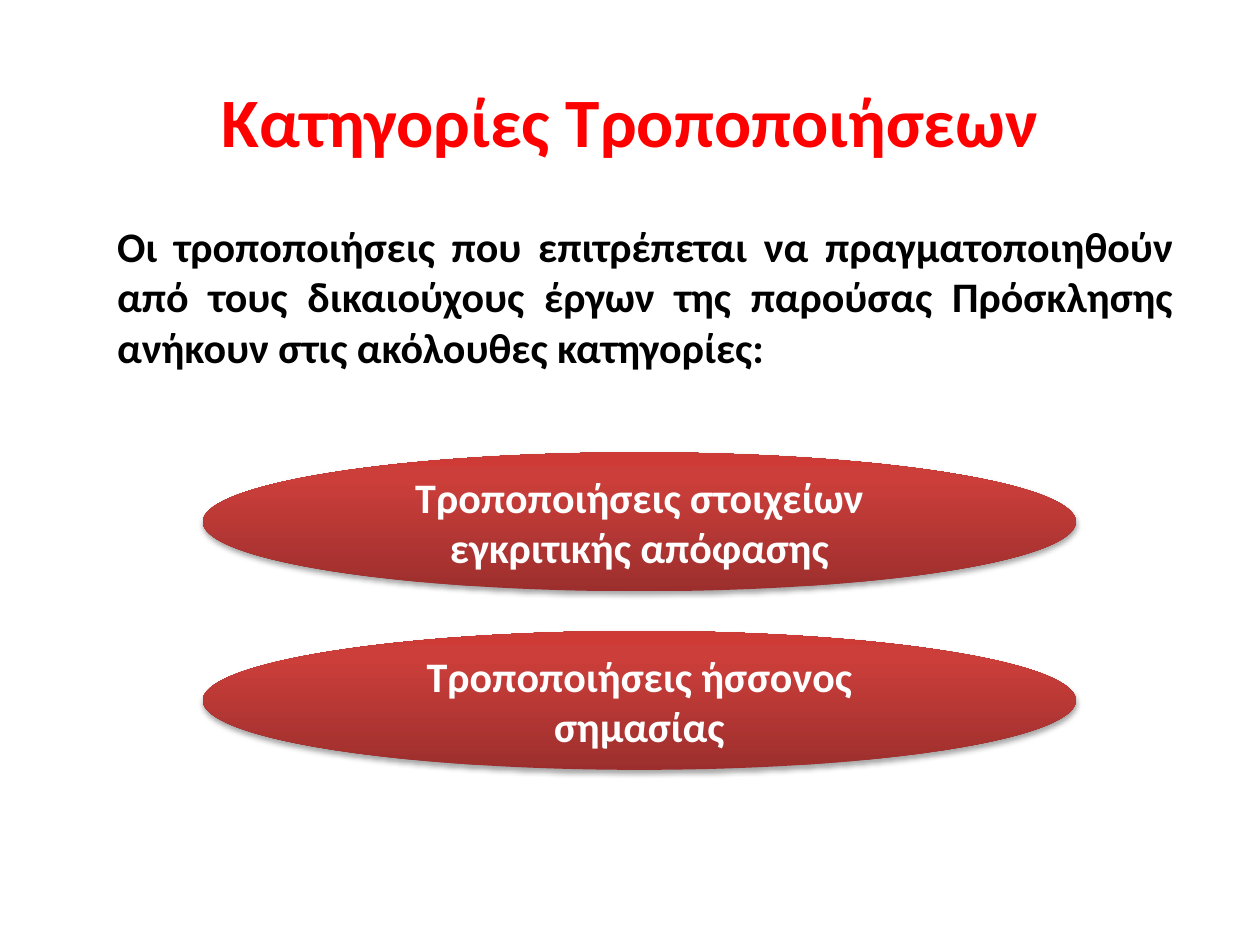
import pptx
import pptx.util
import pptx.dml.color
import pptx.enum.shapes
import pptx.enum.text
import pptx.oxml
import pptx.oxml.ns
from dataclasses import dataclass
from pptx.util import Cm


@dataclass(frozen=True)
class Theme:
    font: str = "Calibri"
    title_size: float = 39.6
    body_size: float = 24
    title_color: str = "FF0000"
    body_color: str = "000000"
    label_color: str = "FFFFFF"
    gradient: tuple = ((0, "9C2F2D"), (80, "CB3E3A"), (100, "CE3B37"))
    shadow_color: str = "000000"


theme = Theme()
Align = pptx.enum.text.PP_ALIGN
Anchor = pptx.enum.text.MSO_ANCHOR


def write_text(shape, text, *, size, color, align, anchor):
    frame = shape.text_frame
    frame.word_wrap = True
    frame.vertical_anchor = anchor
    paragraph = frame.paragraphs[0]
    paragraph.alignment = align
    run = paragraph.add_run()
    run.text = text
    run.font.name = theme.font
    run.font.size = pptx.util.Pt(size)
    run.font.bold = True
    run.font.color.rgb = pptx.dml.color.RGBColor.from_string(color)


def add_gradient_and_shadow(shape):
    namespace = pptx.oxml.ns.nsdecls("a")
    properties = shape.fill._xPr
    shape.fill.gradient()
    shape.fill.gradient_angle = 90
    stops = properties.find(".//" + pptx.oxml.ns.qn("a:gsLst"))
    for stop in list(stops):
        stops.remove(stop)
    for position, color in theme.gradient:
        stops.append(pptx.oxml.parse_xml(
            f'<a:gs {namespace} pos="{position * 1000}"><a:srgbClr val="{color}"/></a:gs>'))
    shape.shadow.inherit = False
    properties.find(pptx.oxml.ns.qn("a:effectLst")).append(pptx.oxml.parse_xml(
        f'<a:outerShdw {namespace} blurRad="40000" dist="23000" dir="5400000" rotWithShape="0">'
        f'<a:srgbClr val="{theme.shadow_color}"><a:alpha val="35000"/></a:srgbClr></a:outerShdw>'))


presentation = pptx.Presentation()
presentation.slide_width = Cm(25.4)
presentation.slide_height = Cm(19.05)
slide = presentation.slides.add_slide(presentation.slide_layouts[6])

# Title
title = slide.shapes.add_textbox(Cm(2.54), Cm(1.52), Cm(20.32), Cm(1.78))
write_text(title, "Κατηγορίες Τροποποιήσεων", size=theme.title_size,
           color=theme.title_color, align=Align.CENTER, anchor=Anchor.MIDDLE)

# Introduction
introduction = slide.shapes.add_textbox(Cm(2.11), Cm(4.32), Cm(21.79), Cm(3.33))
write_text(introduction,
           "Οι τροποποιήσεις που επιτρέπεται να πραγματοποιηθούν από τους δικαιούχους "
           "έργων της παρούσας Πρόσκλησης ανήκουν στις ακόλουθες κατηγορίες:",
           size=theme.body_size, color=theme.body_color,
           align=Align.JUSTIFY, anchor=Anchor.TOP)

# Category ellipses
categories = ("Τροποποιήσεις στοιχείων εγκριτικής απόφασης",
              "Τροποποιήσεις ήσσονος σημασίας")
first_top, step = 9.12, 3.6
for index, category in enumerate(categories):
    ellipse = slide.shapes.add_shape(
        pptx.enum.shapes.MSO_SHAPE.OVAL,
        Cm(4.09), Cm(first_top + index * step), Cm(17.6), Cm(2.8))
    add_gradient_and_shadow(ellipse)
    ellipse.line.fill.background()
    write_text(ellipse, category, size=theme.body_size, color=theme.label_color,
               align=Align.CENTER, anchor=Anchor.MIDDLE)

presentation.save("out.pptx")
